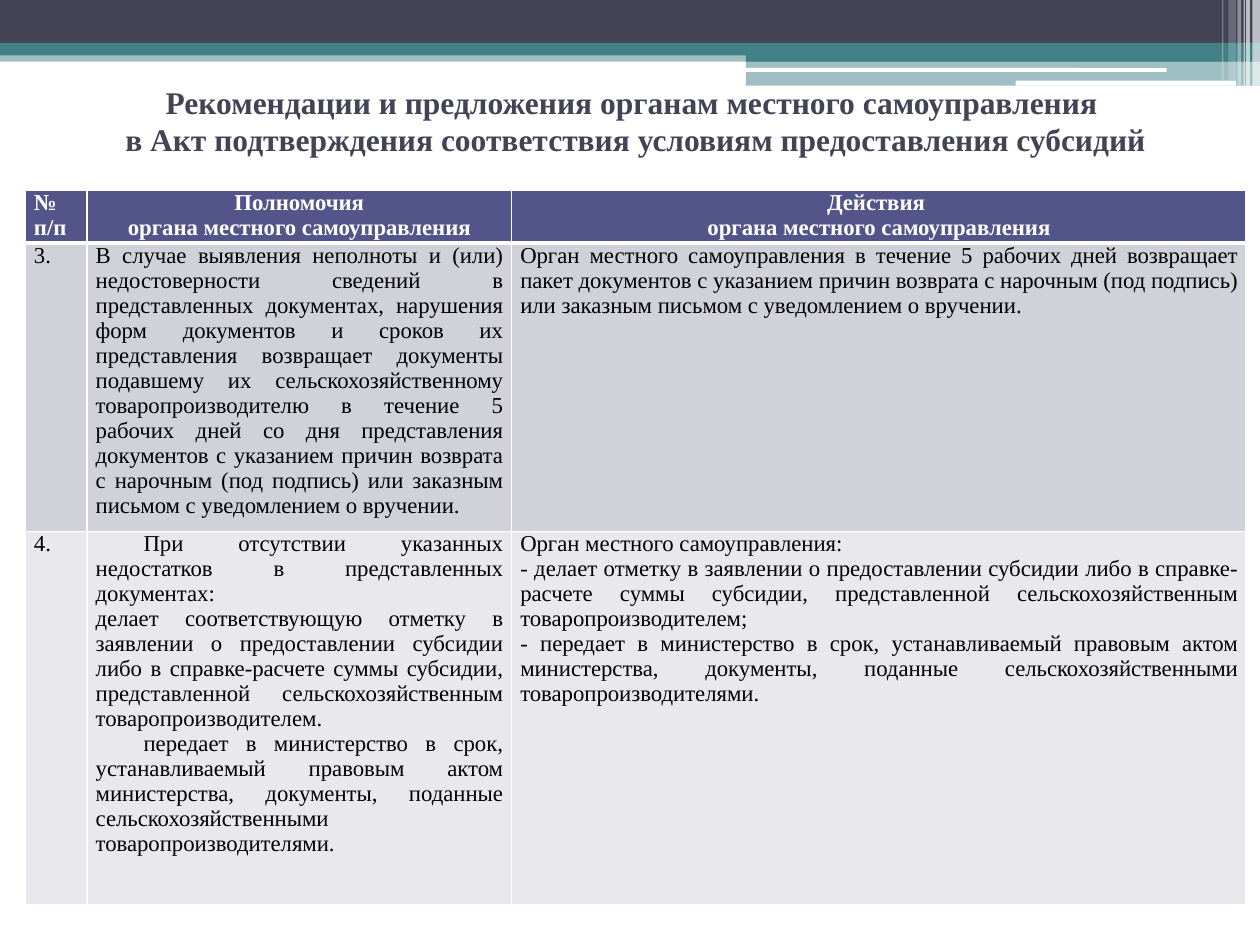
import pptx
import pptx.util
import pptx.dml.color
import pptx.enum.shapes
import pptx.enum.text
import pptx.oxml.ns
import lxml.etree

Inches = pptx.util.Inches
Pt = pptx.util.Pt
ALIGN = pptx.enum.text.PP_ALIGN
SHAPE = pptx.enum.shapes.MSO_SHAPE
qn = pptx.oxml.ns.qn

WIDTH, HEIGHT = 10, 7.5
FONT = "Times New Roman"
COLORS = {
    "dark": "424456",
    "teal": "438086",
    "white": "FFFFFF",
    "header": "53548A",
    "odd": "D1D1DA",
    "even": "E9E9ED",
    "black": "000000",
}
TITLE = (
    "Рекомендации и предложения органам местного самоуправления \v"
    "в Акт подтверждения соответствия условиям предоставления субсидий"
)
FIRST_LINE = 0.38
COLUMNS = [0.49, 3.37, 5.83]
ROWS = [0.42, 2.29, 2.96]
TABLE = [
    [
        ["№ п/п"],
        ["Полномочия", "органа местного самоуправления"],
        ["Действия ", "органа местного самоуправления"],
    ],
    [
        ["3."],
        ["В случае выявления неполноты и (или) недостоверности сведений в представленных "
         "документах, нарушения форм документов и сроков их представления возвращает "
         "документы подавшему их сельскохозяйственному товаропроизводителю в течение 5 "
         "рабочих дней со дня представления документов с указанием причин возврата с "
         "нарочным (под подпись) или заказным письмом с уведомлением о вручении."],
        ["Орган местного самоуправления в течение 5 рабочих дней возвращает пакет документов "
         "с указанием причин возврата с нарочным (под подпись) или заказным письмом с "
         "уведомлением о вручении."],
    ],
    [
        ["4."],
        ["При отсутствии указанных недостатков в представленных документах:",
         "делает соответствующую отметку в заявлении о предоставлении субсидии либо в "
         "справке-расчете суммы субсидии, представленной сельскохозяйственным "
         "товаропроизводителем.",
         "передает в министерство в срок, устанавливаемый правовым актом министерства, "
         "документы, поданные сельскохозяйственными товаропроизводителями."],
        ["Орган местного самоуправления:",
         "- делает отметку в заявлении о предоставлении субсидии либо в справке-расчете суммы "
         "субсидии, представленной сельскохозяйственным товаропроизводителем;",
         "- передает в министерство в срок, устанавливаемый правовым актом министерства, "
         "документы, поданные сельскохозяйственными товаропроизводителями."],
    ],
]
INDENTED = {(2, 1, 0), (2, 1, 2)}


def rgb(name):
    return pptx.dml.color.RGBColor.from_string(COLORS[name])


def add_bar(slide, left, top, width, height, color, opacity=100, kind=SHAPE.RECTANGLE):
    bar = slide.shapes.add_shape(kind, *map(Inches, (left, top, width, height)))
    bar.shadow.inherit = False
    bar.fill.solid()
    bar.fill.fore_color.rgb = rgb(color)
    bar.line.fill.background()
    if opacity < 100:
        tint = bar.fill._xPr.find(".//" + qn("a:srgbClr"))
        lxml.etree.SubElement(tint, qn("a:alpha"), val=str(opacity * 1000))


def add_banner(slide, width):
    split = 0.592 * width
    add_bar(slide, 0, 0.4, width, 0.09, "teal", 50)
    add_bar(slide, 0, 0, width, 0.34, "dark")
    add_bar(slide, 0, 0.34, width, 0.1, "teal")
    add_bar(slide, split, 0.39, width - split, 0.1, "teal")
    add_bar(slide, split, 0.48, width - split, 0.2, "teal", 50)
    for left, top, length, height in [(0.591, 0.54, 3.35, 0.03), (0.806, 0.64, 1.75, 0.04)]:
        add_bar(slide, left * width, top, length, height, "white", kind=SHAPE.ROUNDED_RECTANGLE)
    stripes = [
        (0.06, 0.06, 0.68, 65), (0.11, 0.03, 0.68, 65), (0.13, 0.01, 0.68, 60),
        (0.18, 0.03, 0.68, 40), (0.25, 0.06, 0.64, 20), (0.3, 0.01, 0.64, 30),
    ]
    for from_right, thickness, height, opacity in stripes:
        add_bar(slide, width - from_right, 0, thickness, height, "white", opacity)


def format_runs(paragraph, size, color, bold):
    for run in paragraph.runs:
        run.font.name = FONT
        run.font.size = Pt(size)
        run.font.bold = bold
        run.font.color.rgb = rgb(color)


def place_title(slide, left, top, width, height):
    title = slide.shapes.title
    title.left, title.top, title.width, title.height = map(Inches, (left, top, width, height))
    frame = title.text_frame
    frame.text = TITLE
    frame.word_wrap = True
    frame.auto_size = pptx.enum.text.MSO_AUTO_SIZE.NONE
    frame.vertical_anchor = pptx.enum.text.MSO_ANCHOR.MIDDLE
    frame.paragraphs[0].alignment = ALIGN.CENTER
    format_runs(frame.paragraphs[0], 18, "dark", True)


def set_borders(cell, bottom):
    properties = cell._tc.get_or_add_tcPr()
    sides = [("lnL", 1), ("lnR", 1), ("lnT", 1), ("lnB", bottom)]
    for index, (side, points) in enumerate(sides):
        line = lxml.etree.Element(qn("a:" + side), w=str(Pt(points)))
        fill = lxml.etree.SubElement(line, qn("a:solidFill"))
        lxml.etree.SubElement(fill, qn("a:srgbClr"), val=COLORS["white"])
        properties.insert(index, line)


def fill_cell(cell, row, column):
    header = row == 0
    cell.margin_left = cell.margin_right = Inches(0.07)
    cell.margin_top = cell.margin_bottom = 0
    cell.fill.solid()
    cell.fill.fore_color.rgb = rgb(("header", "odd", "even")[row])
    set_borders(cell, 3 if header else 1)
    cell.text_frame.text = "\n".join(TABLE[row][column])
    for index, paragraph in enumerate(cell.text_frame.paragraphs):
        paragraph.alignment = ALIGN.CENTER if header and column else ALIGN.JUSTIFY
        if (row, column, index) in INDENTED:
            paragraph._p.get_or_add_pPr().set("indent", str(Inches(FIRST_LINE)))
        format_runs(paragraph, 13, "white" if header else "black", header)


def add_duties_table(slide, left, top):
    box = map(Inches, (left, top, sum(COLUMNS), sum(ROWS)))
    table = slide.shapes.add_table(len(ROWS), len(COLUMNS), *box).table
    for column, width in zip(table.columns, COLUMNS):
        column.width = Inches(width)
    for row, height in enumerate(ROWS):
        table.rows[row].height = Inches(height)
        for column in range(len(COLUMNS)):
            fill_cell(table.cell(row, column), row, column)


def main():
    presentation = pptx.Presentation()
    presentation.slide_width = Inches(WIDTH)
    presentation.slide_height = Inches(HEIGHT)
    slide = presentation.slides.add_slide(presentation.slide_layouts[5])
    margin = 0.02 * WIDTH
    add_banner(slide, WIDTH)
    place_title(slide, margin, 0.52, sum(COLUMNS), 0.87)
    add_duties_table(slide, margin, 1.51)
    presentation.save("out.pptx")


if __name__ == "__main__":
    main()
